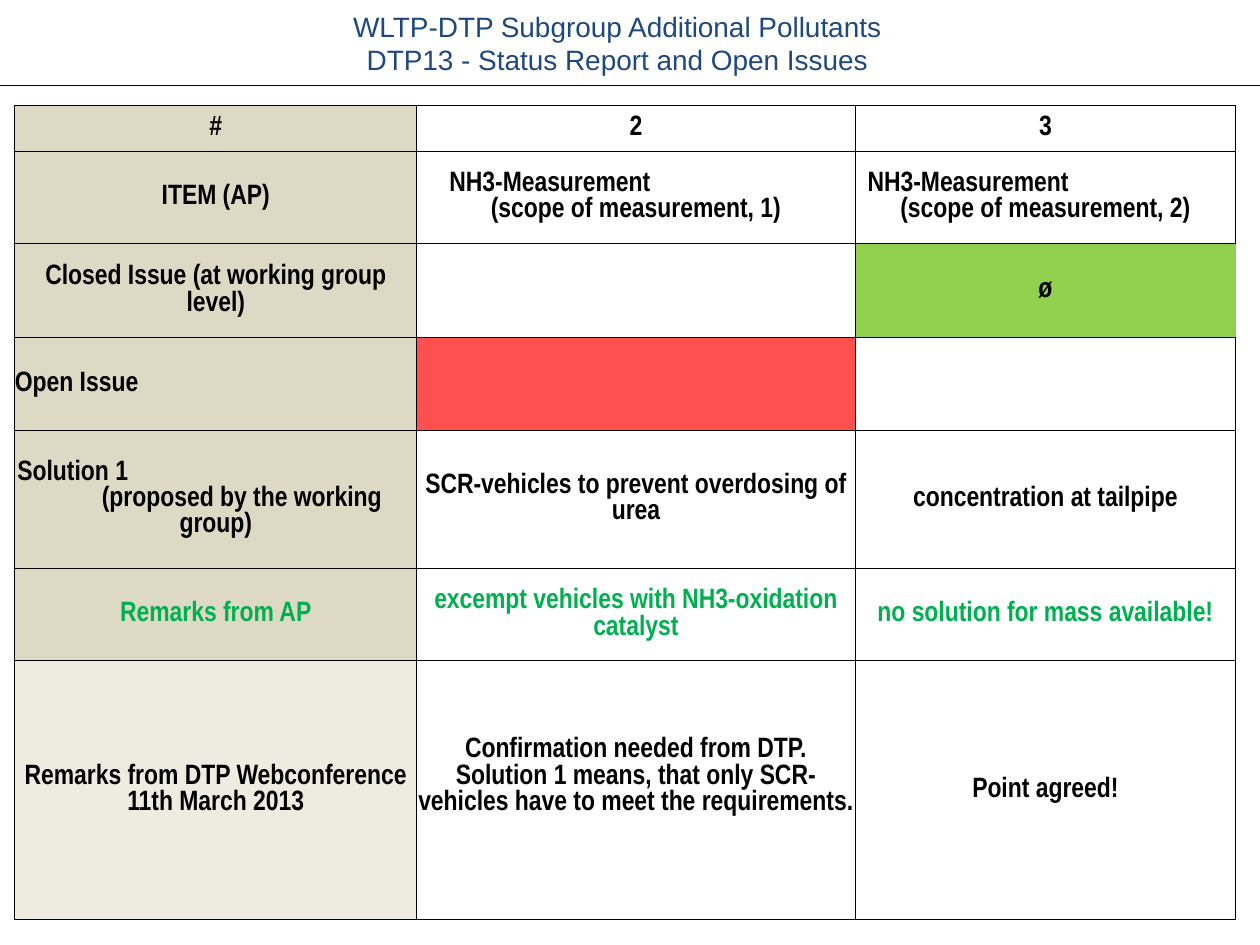
from lxml.etree import SubElement
from pptx import Presentation
from pptx.dml.color import RGBColor
from pptx.enum.shapes import MSO_CONNECTOR as CONN
from pptx.enum.text import MSO_ANCHOR as ANCHOR, MSO_AUTO_SIZE as AUTO, PP_ALIGN as ALIGN
from pptx.oxml import parse_xml
from pptx.oxml.ns import nsdecls, qn
from pptx.util import Cm, Pt

BLACK, GREEN, TAN = "000000", "00B050", "DDD9C4"
TITLE = ["WLTP-DTP Subgroup Additional Pollutants", "DTP13 - Status Report and Open Issues"]
COLS = [8.1, 8.84, 7.67]
ROWS = [
    (0.93, ["#", "2", "3"]),
    (1.86, ["ITEM (AP)", "NH3-Measurement\n(scope of measurement, 1)",
            "NH3-Measurement\n(scope of measurement, 2)"]),
    (1.9, ["Closed Issue (at working group level)", "", "ø"]),
    (1.86, ["Open Issue", "", ""]),
    (2.79, ["Solution 1\n(proposed by the working group)",
            "SCR-vehicles to prevent overdosing of urea", "concentration at tailpipe"]),
    (1.86, ["Remarks from AP", "excempt vehicles with NH3-oxidation catalyst",
            "no solution for mass available!"]),
    (5.21, ["Remarks from DTP Webconference 11th March 2013",
            "Confirmation needed from DTP.\nSolution 1 means, that only SCR-vehicles "
            "have to meet the requirements.", "Point agreed!"]),
]
FILLS = {(r, 0): TAN for r in range(6)} | {(6, 0): "EEECE1", (2, 2): "92D050", (3, 1): "FF5050"}
LEFT_INDENTS = {(1, 1): 0.66, (1, 2): 0.25, (3, 0): 0, (4, 0): 0.05}
SECOND_LINE_INDENTS = {(4, 0): 1.05}
BOTTOM_MARGINS = {(6, 1): 0.53}
OPEN_RIGHT = {(2, 2)}


def rgb(value):
    """Turn a hex string into a colour."""
    return RGBColor.from_string(value)


def apply(obj, **values):
    """Set each given attribute on the object."""
    for name, value in values.items():
        setattr(obj, name, value)


def write(tf, lines, font, color, bold=False):
    """Fill a text frame with one centred paragraph per line."""
    for i, line in enumerate(lines):
        p = tf.paragraphs[0] if i == 0 else tf.add_paragraph()
        p.alignment = ALIGN.CENTER
        r = p.add_run()
        r.text = line
        apply(r.font, name=font, size=Pt(16), bold=bold)
        r.font.color.rgb = rgb(color)


def add_borders(cell, open_right):
    """Draw thin black cell borders, leaving the right side open if asked."""
    tcPr = cell._tc.get_or_add_tcPr()
    for i, side in enumerate("LRTB"):
        paint = (f'<a:solidFill><a:srgbClr val="{BLACK}"/></a:solidFill>'
                 if not (open_right and side == "R") else "<a:noFill/>")
        tcPr.insert(i, parse_xml(f'<a:ln{side} {nsdecls("a")} w="{Pt(0.5)}">{paint}</a:ln{side}>'))


def format_cell(cell, pos, text):
    """Write and format the cell at the given row and column."""
    apply(cell, margin_left=0, margin_right=0, margin_top=0,
          margin_bottom=Cm(BOTTOM_MARGINS.get(pos, 0)), vertical_anchor=ANCHOR.MIDDLE)
    if pos in FILLS:
        cell.fill.solid()
        cell.fill.fore_color.rgb = rgb(FILLS[pos])
    else:
        cell.fill.background()
    add_borders(cell, pos in OPEN_RIGHT)
    if not text:
        return
    write(cell.text_frame, text.split("\n"), "Arial Narrow", GREEN if pos[0] == 5 else BLACK, True)
    ps = cell.text_frame.paragraphs
    if pos in LEFT_INDENTS:
        ps[0].alignment = ALIGN.LEFT
        ps[0]._p.get_or_add_pPr().set("marL", str(Cm(LEFT_INDENTS[pos])))
    if pos in SECOND_LINE_INDENTS:
        ps[1]._p.get_or_add_pPr().set("indent", str(Cm(SECOND_LINE_INDENTS[pos])))


def add_header(slide, left, top, width, height):
    """Place the title and the rule under it."""
    title = slide.shapes.title
    apply(title, left=Cm(left + 3.76), top=Cm(top + 0.05), width=Cm(17.37), height=Cm(height - 0.1))
    tf = title.text_frame
    apply(tf, word_wrap=True, auto_size=AUTO.NONE, vertical_anchor=ANCHOR.MIDDLE)
    write(tf, TITLE, "Arial", "1F497D")
    y = Cm(top + height)
    line = slide.shapes.add_connector(CONN.STRAIGHT, Cm(left), y, Cm(left + width), y)
    line.line.color.rgb = rgb(BLACK)
    line.line.width = Pt(0.75)
    SubElement(line._element.spPr, qn("a:effectLst"))


def add_issue_table(slide, left, top):
    """Place the table of issues with its upper left corner at the given point."""
    width, height = sum(COLS), sum(h for h, _ in ROWS)
    table = slide.shapes.add_table(len(ROWS), len(COLS), Cm(left), Cm(top),
                                   Cm(width), Cm(height)).table
    apply(table, first_row=False, horz_banding=False)
    for col, w in zip(table.columns, COLS):
        col.width = Cm(w)
    for r, (h, texts) in enumerate(ROWS):
        table.rows[r].height = Cm(h)
        for c, text in enumerate(texts):
            format_cell(table.cell(r, c), (r, c), text)


def main():
    """Build and save the status slide."""
    prs = Presentation()
    apply(prs, slide_width=Cm(25.4), slide_height=Cm(19.05))
    slide = prs.slides.add_slide(prs.slide_layouts[5])
    add_header(slide, 0, 0, 25.4, 1.73)
    add_issue_table(slide, 0.3, 2.12)
    prs.save("out.pptx")


if __name__ == "__main__":
    main()
